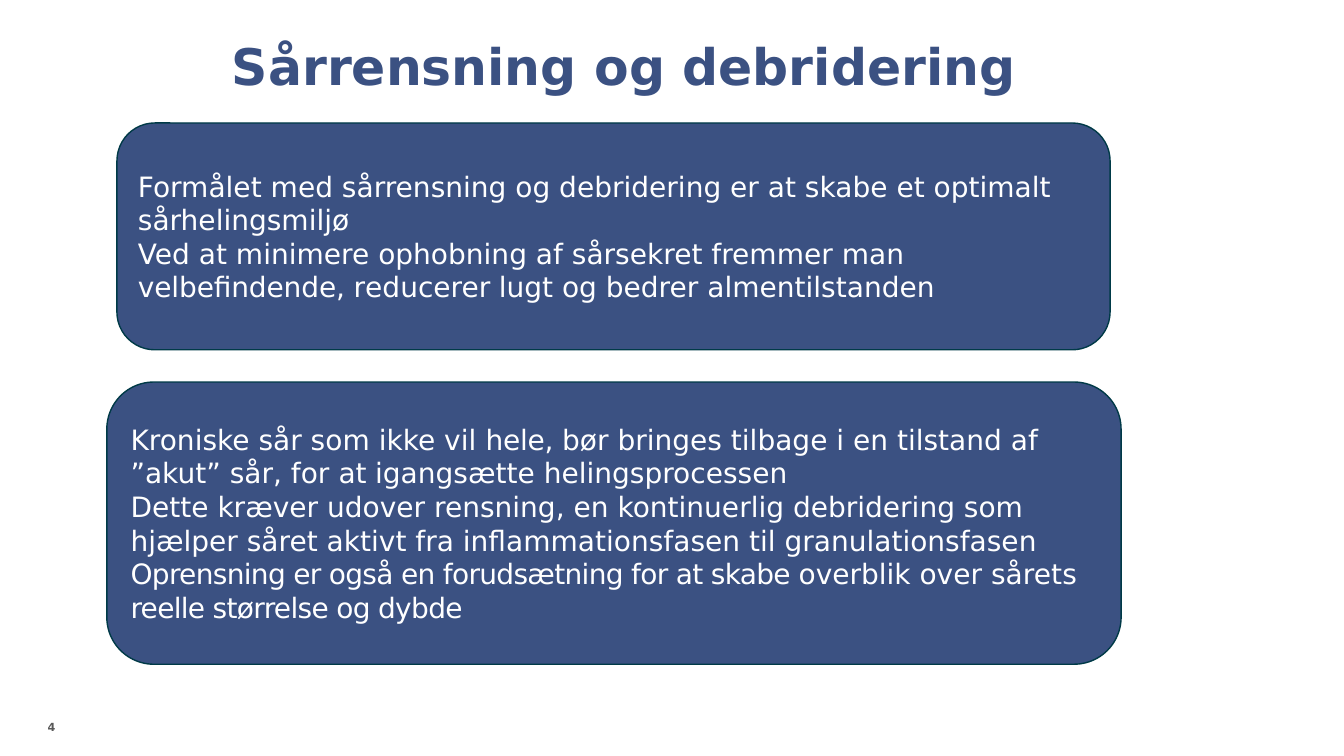
from pptx import Presentation
from pptx.dml.color import RGBColor
from pptx.enum.shapes import MSO_SHAPE as SHAPE
from pptx.enum.text import MSO_ANCHOR as ANCHOR, MSO_AUTO_SIZE as AUTO, PP_ALIGN as ALIGN
from pptx.util import Pt

PX = 9144
FONT = "DejaVu Sans"
NAVY = "3B5182"


def rgb(color):
    return RGBColor.from_string(color)


def add_run(p, text, size, color, bold=False, spacing=0):
    r = p.add_run()
    r.text = text
    r.font.name = FONT
    r.font.size = Pt(size)
    r.font.bold = bold
    r.font.color.rgb = rgb(color)
    if spacing:
        r.font._element.set("spc", str(spacing))


prs = Presentation()
prs.slide_width = 1333 * PX
prs.slide_height = 750 * PX
s = prs.slides.add_slide(prs.slide_layouts[5])

number = s.shapes.add_textbox(16 * PX, 715 * PX, 39 * PX, 35 * PX)
title = s.shapes.title
title.left, title.top, title.width, title.height = [v * PX for v in (126, -22, 1055, 118)]
for sp in (number, title):
    tf = sp.text_frame
    tf.word_wrap = True
    tf.auto_size = AUTO.NONE
    tf.margin_left = tf.margin_top = tf.margin_right = tf.margin_bottom = 0

p = number.text_frame.paragraphs[0]
p.alignment = ALIGN.RIGHT
add_run(p, "4", 8, "595959", bold=True)

title.text_frame.vertical_anchor = ANCHOR.BOTTOM
p = title.text_frame.paragraphs[0]
p.alignment = ALIGN.LEFT
p.line_spacing = 0.9
p._p.get_or_add_pPr().set("marL", str(104 * PX))
add_run(p, "Sårrensning og debridering", 36, NAVY, bold=True)

boxes = [
    ((116, 122, 985, 225), [
        [("Formålet med sårrensning og debridering er at skabe et optimalt sårhelingsmiljø", 0)],
        [("Ved at minimere ophobning af sårsekret fremmer man ", 0),
         ("velbefindende, ", -10), ("r", -60), ("educere", 0), ("r ", -40),
         ("lugt og bedrer almentilstanden", 0)],
    ]),
    ((106, 379, 1006, 280), [
        [("Kroniske sår som ikke vil ", 0), ("hele, ", -20),
         ("bør bringes tilbage i en tilstand af ”akut” sår, for ", 0),
         ("at ", -20), ("igangsætte helingsprocessen", 0)],
        [("Dette kræver udover rensning, en kontinuerlig debridering som hjælper "
          "såret aktivt fra inflammationsfasen til granulationsfasen", 0)],
        [("Oprensning er også en forudsætning for at skabe ", -50),
         ("overblik over såret", 0), ("s reelle størrelse og dybde", -50)],
    ]),
]
for bounds, paragraphs in boxes:
    sp = s.shapes.add_shape(SHAPE.ROUNDED_RECTANGLE, *[v * PX for v in bounds])
    sp.shadow.inherit = False
    sp.fill.solid()
    sp.fill.fore_color.rgb = rgb(NAVY)
    sp.line.color.rgb = rgb("003A47")
    sp.line.width = Pt(1)
    tf = sp.text_frame
    tf.word_wrap = True
    tf.vertical_anchor = ANCHOR.MIDDLE
    for i, runs in enumerate(paragraphs):
        p = tf.add_paragraph() if i else tf.paragraphs[0]
        p.alignment = ALIGN.LEFT
        for text, spacing in runs:
            add_run(p, text, 20, "FFFFFF", spacing=spacing)

prs.save("out.pptx")
